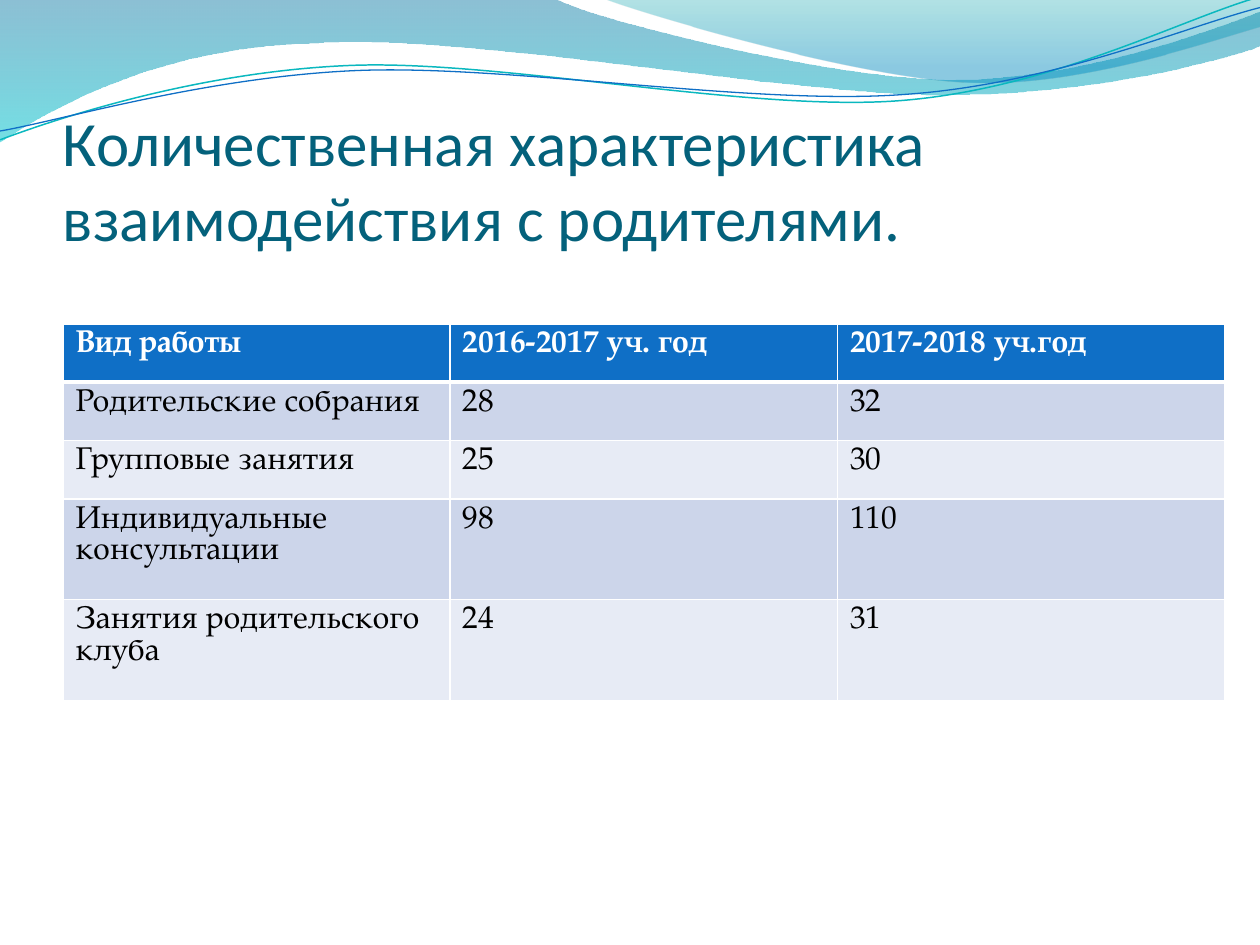
import math

from lxml import etree
from pptx import Presentation
from pptx import util as u
from pptx.dml.color import RGBColor
from pptx.enum import text
from pptx.oxml import ns

WIDTH, HEIGHT = 10, 7.5
MARGIN = WIDTH * 0.05
WHITE = RGBColor(0xFF, 0xFF, 0xFF)
BLACK = RGBColor(0, 0, 0)
TITLE = RGBColor(0x04, 0x61, 0x7B)
BLUE = RGBColor(0x0F, 0x6F, 0xC6)
TEAL = RGBColor(0x0A, 0xB8, 0xBF)
BANDS = RGBColor(0xCC, 0xD5, 0xEA), RGBColor(0xE7, 0xEB, 0xF5)

# Gradient stops: position, colour, opacity in percent
BACK_STOPS = [(0, RGBColor(0, 0x74, 0xA1), 45), (1, RGBColor(0, 0xC6, 0xCF), 55)]
FRONT_STOPS = [(0, RGBColor(0, 0xA1, 0xA9), 30), (0.8, RGBColor(0, 0x8B, 0xBF), 45)]

# Outlines: one point is a straight line's end, three points are a Bezier curve
BACK_WAVE = [
    [(0, 0)], [(4.4, -0.01)], [(4.76, 0.17), (6.64, 0.63), (7.58, 0.63)],
    [(8.53, 0.63), (9.58, 0.26), (10, 0.09)], [(10.01, 0.36)],
    [(9.83, 0.44), (8.7, 0.76), (7.46, 0.75)],
    [(6.22, 0.75), (3.82, 0.28), (2.57, 0.34)],
    [(1.29, 0.36), (0.46, 0.83), (-0.01, 1.13)],
]
FRONT_WAVE = [
    [(4.79, -0.01)], [(5.09, 0.11), (6.82, 0.62), (7.69, 0.65)],
    [(8.56, 0.69), (9.61, 0.32), (10, 0.21)], [(10, 0)],
]
TEAL_CURVE = [
    [(0, 1.11)], [(0.48, 0.93), (1.58, 0.57), (2.77, 0.52)],
    [(3.95, 0.47), (5.93, 0.89), (7.13, 0.8)],
    [(8.33, 0.71), (9.38, 0.15), (9.98, -0.02)],
]
BLUE_CURVE = [
    [(0, 1.04)], [(0.47, 0.96), (1.64, 0.61), (2.83, 0.56)],
    [(4.03, 0.51), (5.97, 0.84), (7.17, 0.75)],
    [(8.36, 0.67), (9.41, 0.21), (10, 0.06)],
]
TILT = 2.7
TILT_CENTER = 4.99, 0.58

ROWS = [
    ("Вид работы", "2016-2017 уч. год", "2017-2018 уч.год"),
    ("Родительские собрания", "28", "32"),
    ("Групповые занятия", "25", "30"),
    ("Индивидуальные консультации", "98", "110"),
    ("Занятия родительского клуба", "24", "31"),
]
TABLE_WIDTH, TABLE_HEIGHT = 9.22, 2.99
TALL_ROW = 0.8
LOW_ROW = (TABLE_HEIGHT - 2 * TALL_ROW) / 3
ROW_HEIGHTS = [LOW_ROW] * 3 + [TALL_ROW] * 2


def level(point):
    """Turn a point of a tilted curve back to the level position."""
    angle = math.radians(TILT)
    dx, dy = (value - center for value, center in zip(point, TILT_CENTER))
    return (TILT_CENTER[0] + dx * math.cos(angle) - dy * math.sin(angle),
            TILT_CENTER[1] + dx * math.sin(angle) + dy * math.cos(angle))


def add_outline(s, outline, close):
    parts = [[(u.Inches(x), u.Inches(y)) for x, y in part] for part in outline]
    builder = s.shapes.build_freeform(*parts[0][0])
    builder.add_line_segments([part[-1] for part in parts[1:]], close=close)
    sp = builder.convert_to_shape()
    sp.shadow.inherit = False
    # Bend the segments that have control points
    for segment, part in zip(sp._element.xpath(".//a:path/a:lnTo"), parts[1:]):
        if len(part) == 3:
            curve = etree.Element(ns.qn("a:cubicBezTo"))
            for x, y in part:
                etree.SubElement(curve, ns.qn("a:pt"),
                                 x=str(x - sp.left), y=str(y - sp.top))
            segment.getparent().replace(segment, curve)
    return sp


def add_wave(s, outline, stops):
    sp = add_outline(s, outline, True)
    sp.line.fill.background()
    sp.fill.gradient()
    sp.fill.gradient_angle = 270
    for stop, (position, color, _) in zip(sp.fill.gradient_stops, stops):
        stop.position = position
        stop.color.rgb = color
    colors = sp._element.xpath("./p:spPr/a:gradFill//a:srgbClr")
    for color, (_, _, opacity) in zip(colors, stops):
        etree.SubElement(color, ns.qn("a:alpha"), val=str(opacity * 1000))


def add_curve(s, outline, color, width):
    sp = add_outline(s, [[level(point) for point in part] for part in outline], False)
    sp.rotation = 360 - TILT
    sp.fill.background()
    sp.line.color.rgb = color
    sp.line.width = u.Pt(width)


def add_run(p, content, font, size, color, bold=False):
    r = p.add_run()
    r.text = content
    r.font.name = font
    r.font.size = u.Pt(size)
    r.font.color.rgb = color
    r.font.bold = bold


def add_title(s, content):
    box = s.shapes.add_textbox(u.Inches(MARGIN), u.Inches(0.77),
                               u.Inches(WIDTH * 0.9), u.Inches(HEIGHT / 6))
    tf = box.text_frame
    tf.word_wrap = True
    tf.vertical_anchor = text.MSO_ANCHOR.BOTTOM
    tf.margin_left = tf.margin_right = tf.margin_bottom = 0
    tf.margin_top = u.Inches(0.05)
    add_run(tf.paragraphs[0], content, "Calibri", 36, TITLE)


def set_borders(cell, top, bottom):
    tc_pr = cell._tc.get_or_add_tcPr()
    for side, width in (("L", 1), ("R", 1), ("T", top), ("B", bottom)):
        line = etree.SubElement(tc_pr, ns.qn(f"a:ln{side}"), w=str(u.Pt(width)))
        fill = etree.SubElement(line, ns.qn("a:solidFill"))
        etree.SubElement(fill, ns.qn("a:srgbClr"), val=str(WHITE))


def add_table(s):
    columns = len(ROWS[0])
    table = s.shapes.add_table(
        len(ROWS), columns, u.Inches(MARGIN), u.Inches(2.57),
        u.Inches(TABLE_WIDTH), u.Inches(TABLE_HEIGHT)).table
    for column in table.columns:
        column.width = u.Inches(TABLE_WIDTH / columns)
    for i, (row, values) in enumerate(zip(table.rows, ROWS)):
        row.height = u.Inches(ROW_HEIGHTS[i])
        header = i == 0
        for cell, value in zip(row.cells, values):
            # A thick rule separates the header from the body
            set_borders(cell, 3 if i == 1 else 1, 3 if header else 1)
            cell.fill.solid()
            cell.fill.fore_color.rgb = BLUE if header else BANDS[(i - 1) % 2]
            add_run(cell.text_frame.paragraphs[0], value, "TeX Gyre Pagella", 18,
                    WHITE if header else BLACK, header)


def main():
    prs = Presentation()
    prs.slide_width, prs.slide_height = u.Inches(WIDTH), u.Inches(HEIGHT)
    s = prs.slides.add_slide(prs.slide_layouts[6])

    # Waves along the top edge
    add_wave(s, BACK_WAVE, BACK_STOPS)
    add_wave(s, FRONT_WAVE, FRONT_STOPS)
    add_curve(s, TEAL_CURVE, TEAL, 0.85)
    add_curve(s, BLUE_CURVE, BLUE, 0.75)

    # Title and table
    add_title(s, "Количественная характеристика взаимодействия с родителями.")
    add_table(s)
    prs.save("out.pptx")


if __name__ == "__main__":
    main()
